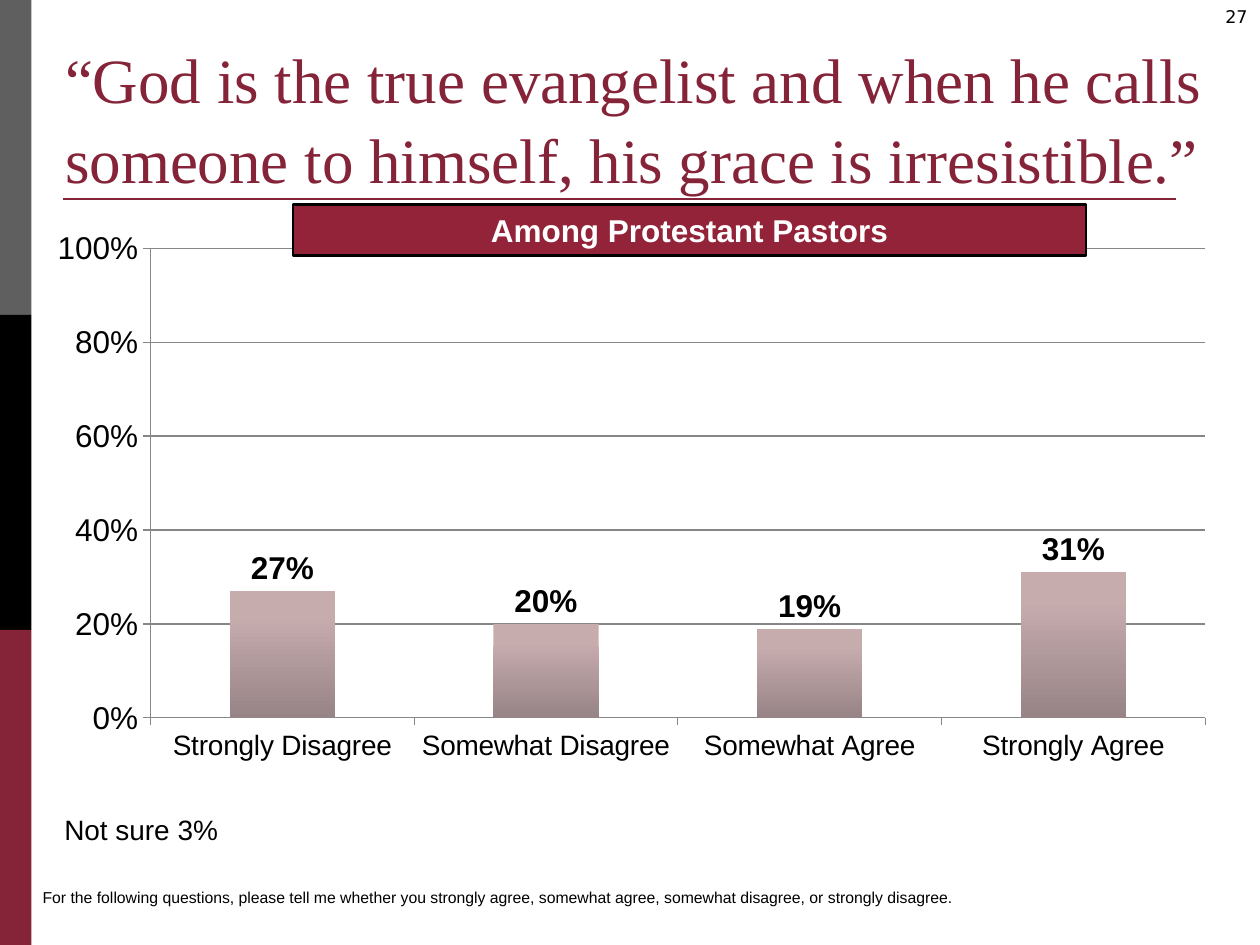
"""Build a survey slide with one column chart of pastors' answers."""
from dataclasses import dataclass

import lxml.etree
import pptx
import pptx.chart.data
import pptx.dml.color
import pptx.enum.chart
import pptx.enum.shapes
import pptx.enum.text
import pptx.oxml
import pptx.oxml.ns
import pptx.util

Pt = pptx.util.Pt
qn = pptx.oxml.ns.qn
ALIGN = pptx.enum.text.PP_ALIGN
ANCHOR = pptx.enum.text.MSO_ANCHOR


@dataclass(frozen=True)
class Theme:
    """Colours, fonts and type sizes of the slide."""
    maroon: str = "852338"
    banner: str = "922339"
    gray: str = "5F5F5F"
    black: str = "000000"
    white: str = "FFFFFF"
    bar_top: str = "C7ACAE"
    bar_bottom: str = "978486"
    grid: str = "868686"
    serif: str = "Times New Roman"
    sans: str = "Arial"
    number_font: str = "DejaVu Sans"
    title: int = 36
    large: int = 18
    medium: int = 16
    number: int = 10
    small: int = 9


THEME = Theme()


def rgb(value):
    """Return a colour object for a hex string."""
    return pptx.dml.color.RGBColor.from_string(value)


def style_font(font, size, color=THEME.black, name=THEME.sans, bold=False):
    """Apply typeface, size, colour and weight to a font."""
    font.name, font.size, font.bold = name, Pt(size), bold
    font.color.rgb = rgb(color)


def set_text(sp, text, size, align=ALIGN.LEFT, anchor=ANCHOR.TOP, **style):
    """Write one formatted paragraph into a shape."""
    tf = sp.text_frame
    tf.text = text
    tf.word_wrap = True
    tf.auto_size = pptx.enum.text.MSO_AUTO_SIZE.NONE
    tf.vertical_anchor = anchor
    p = tf.paragraphs[0]
    p.alignment = align
    style_font(p.runs[0].font, size, **style)
    return p


def add_rect(s, box, fill, line=None):
    """Add a flat rectangle, outlined when a line colour is given."""
    sp = s.shapes.add_shape(pptx.enum.shapes.MSO_SHAPE.RECTANGLE, *map(Pt, box))
    sp.shadow.inherit = False
    sp.fill.solid()
    sp.fill.fore_color.rgb = rgb(fill)
    if line:
        sp.line.color.rgb = rgb(line)
        sp.line.width = Pt(1.5)
    else:
        sp.line.fill.background()
    return sp


def add_label(s, box, text, size, **style):
    """Add a text box with one paragraph."""
    set_text(s.shapes.add_textbox(*map(Pt, box)), text, size, **style)


def add_rule(s, left, right, y):
    """Add the horizontal rule below the title."""
    line = s.shapes.add_connector(
        pptx.enum.shapes.MSO_CONNECTOR.STRAIGHT, Pt(left), Pt(y), Pt(right), Pt(y))
    line.line.color.rgb = rgb(THEME.maroon)
    line.line.width = Pt(1.5)
    lxml.etree.SubElement(line._element.spPr, qn("a:effectLst"))


def add_title(s, box, text):
    """Place and fill the title placeholder."""
    sp = s.shapes.title
    sp.left, sp.top, sp.width, sp.height = map(Pt, box)
    p = set_text(sp, text, THEME.title, anchor=ANCHOR.BOTTOM,
                 color=THEME.maroon, name=THEME.serif)
    p.line_spacing = 1.05


def set_plot_layout(chart, x, y, w, h):
    """Fix the inner plot area as fractions of the chart."""
    area = chart._chartSpace.chart.plotArea
    for old in area.findall(qn("c:layout")):
        area.remove(old)
    layout = lxml.etree.Element(qn("c:layout"))
    manual = lxml.etree.SubElement(layout, qn("c:manualLayout"))
    values = (("layoutTarget", "inner"), ("xMode", "edge"), ("yMode", "edge"),
              ("x", x), ("y", y), ("w", w), ("h", h))
    for tag, value in values:
        lxml.etree.SubElement(manual, qn(f"c:{tag}")).set("val", str(value))
    area.insert(0, layout)


def style_axis(axis, size):
    """Format the line, ticks and labels of an axis."""
    axis.major_tick_mark = pptx.enum.chart.XL_TICK_MARK.OUTSIDE
    axis.minor_tick_mark = pptx.enum.chart.XL_TICK_MARK.NONE
    axis.format.line.color.rgb = rgb(THEME.grid)
    axis.format.line.width = Pt(0.75)
    style_font(axis.tick_labels.font, size)


def style_bars(plot):
    """Give the columns their gradient and value labels."""
    plot.gap_width = 150
    plot.vary_by_categories = False
    fill = plot.series[0].format.fill
    fill.gradient()
    fill.gradient_angle = 270
    stops = ((0.2, THEME.bar_top), (1, THEME.bar_bottom))
    for stop, (position, color) in zip(fill.gradient_stops, stops):
        stop.position = position
        stop.color.rgb = rgb(color)
    plot.has_data_labels = True
    labels = plot.data_labels
    labels.show_value = True
    labels.number_format, labels.number_format_is_linked = "0%", False
    labels.position = pptx.enum.chart.XL_LABEL_POSITION.OUTSIDE_END
    style_font(labels.font, THEME.large, bold=True)


def add_column_chart(s, box, answers):
    """Add the chart of answer shares."""
    data = pptx.chart.data.CategoryChartData(number_format="0%")
    data.categories = list(answers)
    data.add_series("Series 1", list(answers.values()))
    chart = s.shapes.add_chart(
        pptx.enum.chart.XL_CHART_TYPE.COLUMN_CLUSTERED, *map(Pt, box), data).chart
    chart.has_legend = chart.has_title = False
    style_font(chart.font, THEME.large)
    style_axis(chart.category_axis, THEME.medium)
    axis = chart.value_axis
    style_axis(axis, THEME.large)
    axis.minimum_scale, axis.maximum_scale, axis.major_unit = 0, 1, 0.2
    axis.tick_labels.number_format = "0%"
    axis.tick_labels.number_format_is_linked = False
    axis.has_major_gridlines = True
    axis.major_gridlines.format.line.color.rgb = rgb(THEME.grid)
    axis.major_gridlines.format.line.width = Pt(0.75)
    style_bars(chart.plots[0])
    set_plot_layout(chart, 0.095, 0.054, 0.889, 0.807)


def main():
    """Build and save the slide."""
    prs = pptx.Presentation()
    prs.slide_width, prs.slide_height = Pt(720), Pt(540)
    s = prs.slides.add_slide(prs.slide_layouts[5])
    for i, color in enumerate((THEME.gray, THEME.black, THEME.maroon)):
        add_rect(s, (0, 180 * i, 18, 180), color)
    add_rule(s, 36, 672, 113.8)
    add_label(s, (684, 0, 36, 24), "27", THEME.number, align=ALIGN.RIGHT,
              name=THEME.number_font)
    add_title(s, (30, 19.5, 674, 96),
              "“God is the true evangelist and when he calls someone to himself, "
              "his grace is irresistible.”")
    add_label(s, (17.3, 504, 551.5, 18),
              "For the following questions, please tell me whether you strongly agree, "
              "somewhat agree, somewhat disagree, or strongly disagree.", THEME.small)
    add_column_chart(s, (21.6, 124, 678, 332.5), {
        "Strongly Disagree": 0.27, "Somewhat Disagree": 0.20,
        "Somewhat Agree": 0.19, "Strongly Agree": 0.31})
    add_label(s, (29.7, 461, 126.7, 26.6), "Not sure 3%", THEME.medium)
    banner = add_rect(s, (167.5, 117, 453, 29), THEME.banner, THEME.black)
    set_text(banner, "Among Protestant Pastors", THEME.large, align=ALIGN.CENTER,
             anchor=ANCHOR.MIDDLE, color=THEME.white, bold=True)
    prs.save("out.pptx")


if __name__ == "__main__":
    main()
